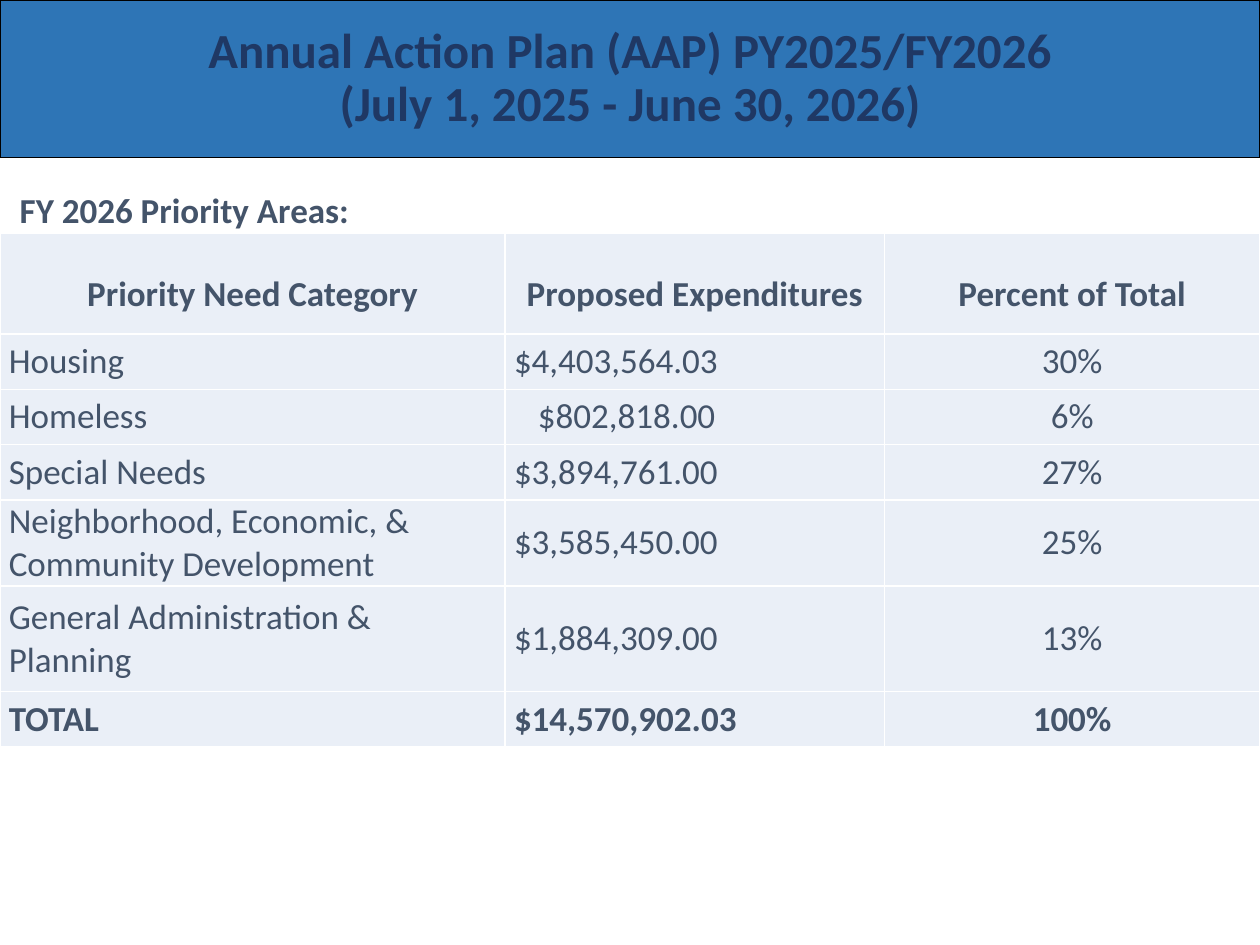
from dataclasses import dataclass

from lxml.etree import SubElement
from pptx import Presentation
from pptx.dml.color import RGBColor as Color
from pptx.enum.shapes import MSO_SHAPE as Shape
from pptx.enum.text import MSO_ANCHOR as Anchor, MSO_AUTO_SIZE as AutoSize, PP_ALIGN as Align
from pptx.oxml.ns import qn
from pptx.util import Inches, Pt


@dataclass(frozen=True)
class Theme:
    font: str = "Calibri"
    banner: str = "2E75B6"
    outline: str = "000000"
    title: str = "1F3864"
    text: str = "44546A"
    cell: str = "EAEFF7"
    border: str = "FFFFFF"
    title_size: int = 28
    body_size: int = 20


GRID_COLUMNS, GRID_ROWS = 100, 75
COLUMN_WIDTHS = [40.1, 30.1, 29.8]
ROW_HEIGHTS = [8, 4.4, 4.4, 4.4, 4.4, 8.4, 4.4]
SHORT_AMOUNT_INDENT = 1.9
PRIORITIES = [
    ("Priority Need Category", "Proposed Expenditures", "Percent of Total"),
    ("Housing", "$4,403,564.03", "30%"),
    ("Homeless", "$802,818.00", "6%"),
    ("Special Needs", "$3,894,761.00", "27%"),
    ("Neighborhood, Economic, & Community Development", "$3,585,450.00", "25%"),
    ("General Administration & Planning", "$1,884,309.00", "13%"),
    ("TOTAL", "$14,570,902.03", "100%"),
]


class SlideBuilder:
    def __init__(self, deck, theme):
        self.theme = theme
        self.slide = deck.slides.add_slide(deck.slide_layouts[6])
        self.column = deck.slide_width / GRID_COLUMNS
        self.row = deck.slide_height / GRID_ROWS

    def place(self, left, top, width, height):
        """Turn grid columns and rows into slide lengths."""
        return (round(left * self.column), round(top * self.row),
                round(width * self.column), round(height * self.row))

    def set_text(self, frame, text, size, color, bold=True, align=Align.CENTER, spacing=None):
        paragraph = frame.paragraphs[0]
        paragraph.text = text
        paragraph.alignment = align
        paragraph.line_spacing = spacing
        font = paragraph.font
        font.name, font.size, font.bold = self.theme.font, Pt(size), bold
        font.color.rgb = Color.from_string(color)

    def banner(self, text, *area):
        box = self.slide.shapes.add_shape(Shape.RECTANGLE, *self.place(*area))
        box.shadow.inherit = False
        box.fill.solid()
        box.fill.fore_color.rgb = Color.from_string(self.theme.banner)
        box.line.color.rgb = Color.from_string(self.theme.outline)
        box.line.width = Pt(1)
        box.text_frame.word_wrap = True
        box.text_frame.vertical_anchor = Anchor.MIDDLE
        self.set_text(box.text_frame, text, self.theme.title_size, self.theme.title, spacing=0.9)

    def label(self, text, *area):
        frame = self.slide.shapes.add_textbox(*self.place(*area)).text_frame
        frame.word_wrap = True
        frame.auto_size = AutoSize.SHAPE_TO_FIT_TEXT
        self.set_text(frame, text, self.theme.body_size, self.theme.text)

    def border(self, cell):
        properties = cell._tc.get_or_add_tcPr()
        for position, side in enumerate(("lnL", "lnR", "lnT", "lnB")):
            line = SubElement(properties, qn(f"a:{side}"), w=str(Pt(1)))
            fill = SubElement(line, qn("a:solidFill"))
            SubElement(fill, qn("a:srgbClr"), val=self.theme.border)
            properties.insert(position, line)

    def table(self, rows, left, top):
        area = self.place(left, top, sum(COLUMN_WIDTHS), sum(ROW_HEIGHTS))
        table = self.slide.shapes.add_table(len(rows), len(COLUMN_WIDTHS), *area).table
        table.first_row = table.horz_banding = False
        for column, width in zip(table.columns, COLUMN_WIDTHS):
            column.width = round(width * self.column)
        for row, height in zip(table.rows, ROW_HEIGHTS):
            row.height = round(height * self.row)
        for row_index, values in enumerate(rows):
            is_header = row_index == 0
            is_total = row_index == len(rows) - 1
            for column_index, value in enumerate(values):
                cell = table.cell(row_index, column_index)
                cell.fill.solid()
                cell.fill.fore_color.rgb = Color.from_string(self.theme.cell)
                self.border(cell)
                cell.vertical_anchor = Anchor.MIDDLE
                cell.margin_left = cell.margin_right = Inches(0.07)
                cell.margin_top = cell.margin_bottom = 0
                centred = is_header or column_index == 2
                self.set_text(cell.text_frame, value, self.theme.body_size, self.theme.text,
                              bold=is_header or is_total,
                              align=Align.CENTER if centred else Align.LEFT,
                              spacing=1.5 if is_header else None)
        return table

    def indent(self, cell, columns):
        cell.margin_left += round(columns * self.column)


def main():
    deck = Presentation()
    deck.slide_width, deck.slide_height = Inches(10), Inches(7.5)
    builder = SlideBuilder(deck, Theme())
    builder.banner("Annual Action Plan (AAP) PY2025/FY2026\v(July 1, 2025 - June 30, 2026)",
                   0, 0, GRID_COLUMNS, 12.5)
    table = builder.table(PRIORITIES, 0, 18.5)
    builder.indent(table.cell(2, 1), SHORT_AMOUNT_INDENT)
    builder.label("FY 2026 Priority Areas:", 0, 14.5, 29.3, 4.4)
    deck.save("out.pptx")


if __name__ == "__main__":
    main()
